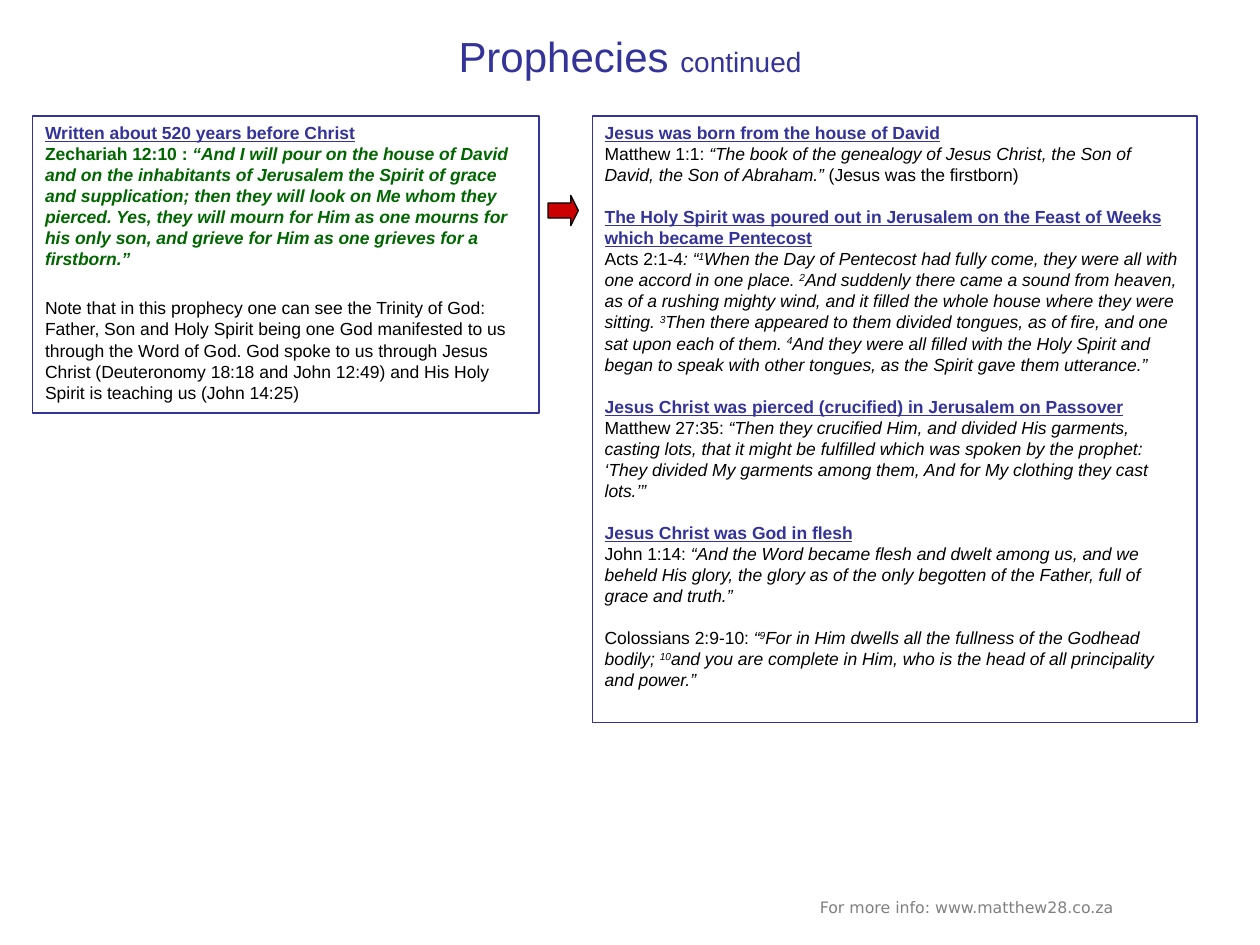
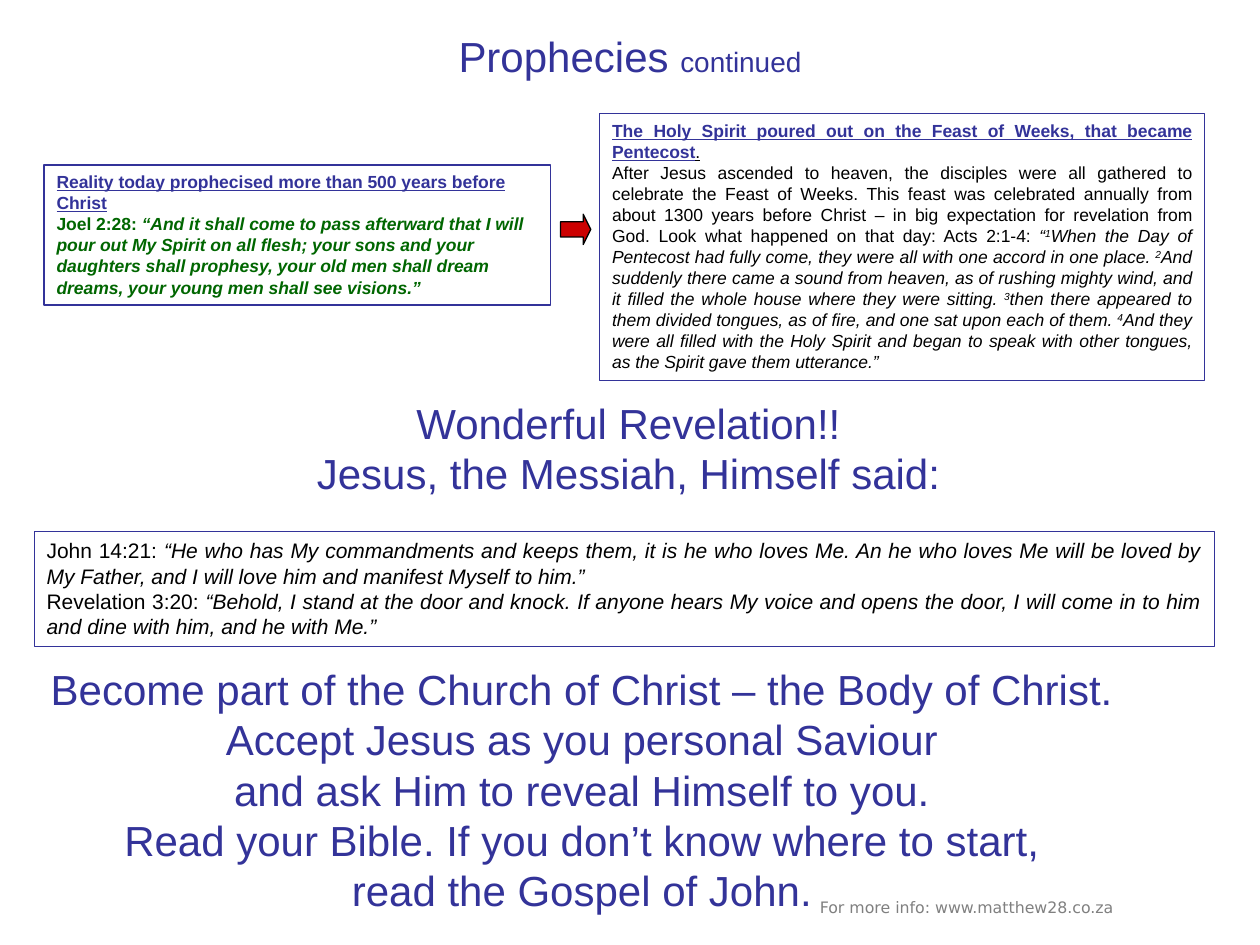
from dataclasses import dataclass
from typing import NamedTuple

from pptx import Presentation
from pptx.dml.color import RGBColor
from pptx.enum.shapes import MSO_SHAPE
from pptx.enum.text import MSO_ANCHOR, PP_ALIGN
from pptx.util import Cm, Pt


# Theme
@dataclass(frozen=True)
class Theme:
    navy: RGBColor = RGBColor(0x33, 0x33, 0x99)
    green: RGBColor = RGBColor(0x00, 0x66, 0x00)
    black: RGBColor = RGBColor(0x00, 0x00, 0x00)
    red: RGBColor = RGBColor(0xCC, 0x00, 0x00)
    grey: RGBColor = RGBColor(0x80, 0x80, 0x80)
    font: str = "Arial"
    footer_font: str = "DejaVu Sans"
    display: int = 24
    subtitle: int = 16
    quote: int = 12
    body: int = 10
    footer: int = 9
    line: float = 0.75


THEME = Theme()


# Building blocks
class Box(NamedTuple):
    """Left, top, width and height in centimetres."""
    left: float
    top: float
    width: float
    height: float

    def emu(self) -> list:
        return [Cm(v) for v in self]


class Style(NamedTuple):
    color: RGBColor = THEME.black
    bold: bool = False
    italic: bool = False
    underline: bool = False
    raised: bool = False
    size: int | None = None


class Run(NamedTuple):
    text: str
    style: Style = Style()


class Para(NamedTuple):
    runs: list[Run]
    before: float = 0


@dataclass(frozen=True)
class Panel:
    box: Box
    paras: list[Para]
    size: int = THEME.body
    align: PP_ALIGN = PP_ALIGN.LEFT


HEADING = Style(THEME.navy, bold=True, underline=True)
PROPHECY_REF = Style(THEME.green, bold=True)
PROPHECY = Style(THEME.green, bold=True, italic=True)
SCRIPTURE = Style(italic=True)
VERSE_NO = Style(italic=True, raised=True)
DISPLAY = Style(THEME.navy)
LINE_GAP = 12   # one body line
NOTE_GAP = 16

TITLE_BOX = Box(1.27, 0.53, 22.86, 1.19)
FOOTER_BOX = Box(13.87, 17.98, 11.23, 0.74)
ARROW_SIZE = 0.61


def verses(*numbered: tuple[int, str]) -> list[Run]:
    """Scripture runs, each led by a raised verse number."""
    return [run for number, text in numbered
            for run in (Run(str(number), VERSE_NO), Run(text, SCRIPTURE))]


def pentecost(wind: str, then: str) -> list[Run]:
    return verses(
        (1, "When the Day of Pentecost had fully come, they were all with one accord in one place. "),
        (2, f"And suddenly there came a sound from heaven, as of {wind} mighty wind, "
            "and it filled the whole house where they were sitting. "),
        (3, f"{then} there appeared to them divided tongues, as of fire, and one sat upon each of them. "),
        (4, "And they were all filled with the Holy Spirit and began to speak with other tongues, "
            "as the Spirit gave them utterance.”"))


# Drawing
def add_run(p, run: Run) -> None:
    for i, line in enumerate(run.text.split("\n")):
        if i:
            p.add_line_break()
        if not line:
            continue
        r = p.add_run()
        r.text = line
        style = run.style
        r.font.color.rgb = style.color
        if style.bold:
            r.font.bold = True
        if style.italic:
            r.font.italic = True
        if style.underline:
            r.font.underline = True
        if style.size:
            r.font.size = Pt(style.size)
        if style.raised:
            r._r.get_or_add_rPr().set("baseline", "30000")


def fill_text(tf, paras: list[Para], size: int, align: PP_ALIGN,
              anchor: MSO_ANCHOR, font: str = THEME.font) -> None:
    tf.word_wrap = True
    tf.vertical_anchor = anchor
    for i, para in enumerate(paras):
        p = tf.add_paragraph() if i else tf.paragraphs[0]
        p.alignment = align
        if para.before:
            p.space_before = Pt(para.before)
        p.font.name = font
        p.font.size = Pt(size)
        for run in para.runs:
            add_run(p, run)


def add_panel(slide, panel: Panel) -> None:
    sp = slide.shapes.add_shape(MSO_SHAPE.RECTANGLE, *panel.box.emu())
    sp.shadow.inherit = False
    sp.fill.background()
    sp.line.color.rgb = THEME.navy
    sp.line.width = Pt(THEME.line)
    fill_text(sp.text_frame, panel.paras, panel.size, panel.align, MSO_ANCHOR.TOP)


def add_arrow(slide, left: float, top: float) -> None:
    box = Box(left, top, ARROW_SIZE, ARROW_SIZE)
    sp = slide.shapes.add_shape(MSO_SHAPE.RIGHT_ARROW, *box.emu())
    sp.adjustments[0], sp.adjustments[1] = 0.5, 0.25
    sp.shadow.inherit = False
    sp.fill.solid()
    sp.fill.fore_color.rgb = THEME.red
    sp.line.color.rgb = THEME.black
    sp.line.width = Pt(THEME.line)


def add_display(slide, box: Box, runs: list[Run]) -> None:
    tb = slide.shapes.add_textbox(*box.emu())
    fill_text(tb.text_frame, [Para(runs)], THEME.display, PP_ALIGN.CENTER, MSO_ANCHOR.MIDDLE)


def new_slide(prs):
    """Blank slide with the shared footer and title."""
    slide = prs.slides.add_slide(prs.slide_layouts[6])
    footer = slide.shapes.add_textbox(*FOOTER_BOX.emu())
    fill_text(footer.text_frame,
              [Para([Run("For more info: www.matthew28.co.za", Style(THEME.grey))])],
              THEME.footer, PP_ALIGN.CENTER, MSO_ANCHOR.TOP, THEME.footer_font)
    add_display(slide, TITLE_BOX, [
        Run("Prophecies ", DISPLAY),
        Run("continued", Style(THEME.navy, size=THEME.subtitle))])
    return slide


# Slide 1: Zechariah
ZECHARIAH = Panel(Box(0.66, 2.34, 10.21, 5.99), [
    Para([Run("Written about 520 years before Christ\n", HEADING),
          Run("Zechariah 12:10 : ", PROPHECY_REF),
          Run("“And I will pour on the house of David and on the inhabitants of Jerusalem the "
              "Spirit of grace and supplication; then they will look on Me whom they pierced. "
              "Yes, they will mourn for Him as one mourns for his only son, and grieve for Him "
              "as one grieves for a firstborn.”", PROPHECY)]),
    Para([Run("Note that in this prophecy one can see the Trinity of God: Father, Son and Holy "
              "Spirit being one God manifested to us through the Word of God. God spoke to us "
              "through Jesus Christ (Deuteronomy 18:18 and John 12:49) and His Holy Spirit is "
              "teaching us (John 14:25)")], NOTE_GAP)])

FULFILMENT = Panel(Box(11.94, 2.34, 12.19, 12.22), [
    Para([Run("Jesus was born from the house of David", HEADING)]),
    Para([Run("Matthew 1:1: "),
          Run("“The book of the genealogy of Jesus Christ, the Son of David, the Son of Abraham.”",
              SCRIPTURE),
          Run(" (Jesus was the firstborn)")]),
    Para([Run("The Holy Spirit was poured out in Jerusalem on the Feast of Weeks which became "
              "Pentecost\n", HEADING),
          Run("Acts 2:1-4"), Run(": “", SCRIPTURE),
          *pentecost("a rushing", "Then")], LINE_GAP),
    Para([Run("Jesus Christ was pierced (crucified) in Jerusalem on Passover", HEADING)], LINE_GAP),
    Para([Run("Matthew 27:35:"),
          Run(" “Then they crucified Him, and divided His garments, casting lots, that it might "
              "be fulfilled which was spoken by the prophet:\n‘They divided My garments among "
              "them, And for My clothing they cast lots.’”", SCRIPTURE)]),
    Para([Run("Jesus Christ was God in flesh", HEADING)], LINE_GAP),
    Para([Run("John 1:14:"),
          Run(" “And the Word became flesh and dwelt among us, and we beheld His glory, the glory "
              "as of the only begotten of the Father, full of grace and truth.”", SCRIPTURE)]),
    Para([Run("Colossians 2:9-10: "), Run("“", SCRIPTURE),
          *verses((9, "For in Him dwells all the fullness of the Godhead bodily; "),
                  (10, "and you are complete in Him, who is the head of all principality "
                       "and power.”"))], LINE_GAP)])

# Slide 2: Joel and the invitation
JOEL = Panel(Box(0.89, 3.33, 10.21, 2.82), [
    Para([Run("Reality today prophecised more than 500 years before Christ\n", HEADING),
          Run("Joel 2:28: ", PROPHECY_REF),
          Run("“And it shall come to pass afterward that I will pour out My Spirit on all flesh; "
              "your sons and your daughters shall prophesy, your old men shall dream dreams, "
              "your young men shall see visions.”", PROPHECY)])])

FEAST_OF_WEEKS = Panel(Box(12.09, 2.29, 12.19, 5.38), [
    Para([Run("The Holy Spirit poured out on the Feast of Weeks, that became Pentecost", HEADING),
          Run(".", Style(underline=True))]),
    Para([Run("After Jesus ascended to heaven, the disciples were all gathered to celebrate the "
              "Feast of Weeks. This feast was celebrated annually from about 1300 years before "
              "Christ – in big expectation for revelation from God. Look what happened on that "
              "day: Acts 2:1-4: "),
          Run("“", SCRIPTURE), *pentecost("rushing", "then")])],
    align=PP_ALIGN.JUSTIFY)

PROMISES = Panel(Box(0.69, 10.72, 23.8, 2.31), [
    Para([Run("John 14:21: "),
          Run("“He who has My commandments and keeps them, it is he who loves Me. An he who loves "
              "Me will be loved by My Father, and I will love him and manifest Myself to him.”",
              SCRIPTURE)]),
    Para([Run("Revelation 3:20:"),
          Run(" “Behold, I stand at the door and knock. If anyone hears My voice and opens the "
              "door, I will come in to him and dine with him, and he with Me.”", SCRIPTURE)])],
    THEME.quote, PP_ALIGN.JUSTIFY)

REVELATION = "Wonderful Revelation!!\nJesus, the Messiah, Himself said:"
INVITATION = ("Become part of the Church of Christ – the Body of Christ.\n"
              "Accept Jesus as you personal Saviour\n"
              "and ask Him to reveal Himself to you.\n"
              "Read your Bible. If you don’t know where to start,\n"
              "read the Gospel of John.")


def main() -> None:
    prs = Presentation()
    prs.slide_width, prs.slide_height = Cm(25.4), Cm(19.05)

    s = new_slide(prs)
    add_panel(s, ZECHARIAH)
    add_arrow(s, 11.05, 3.94)
    add_panel(s, FULFILMENT)

    s = new_slide(prs)
    add_panel(s, JOEL)
    add_arrow(s, 11.3, 4.32)
    add_panel(s, FEAST_OF_WEEKS)
    add_display(s, Box(1.24, 8.13, 22.86, 1.8), [Run(REVELATION, DISPLAY)])
    add_panel(s, PROMISES)
    add_display(s, Box(0.3, 13.51, 22.86, 4.8), [Run(INVITATION, DISPLAY)])

    prs.save("out.pptx")


if __name__ == "__main__":
    main()
